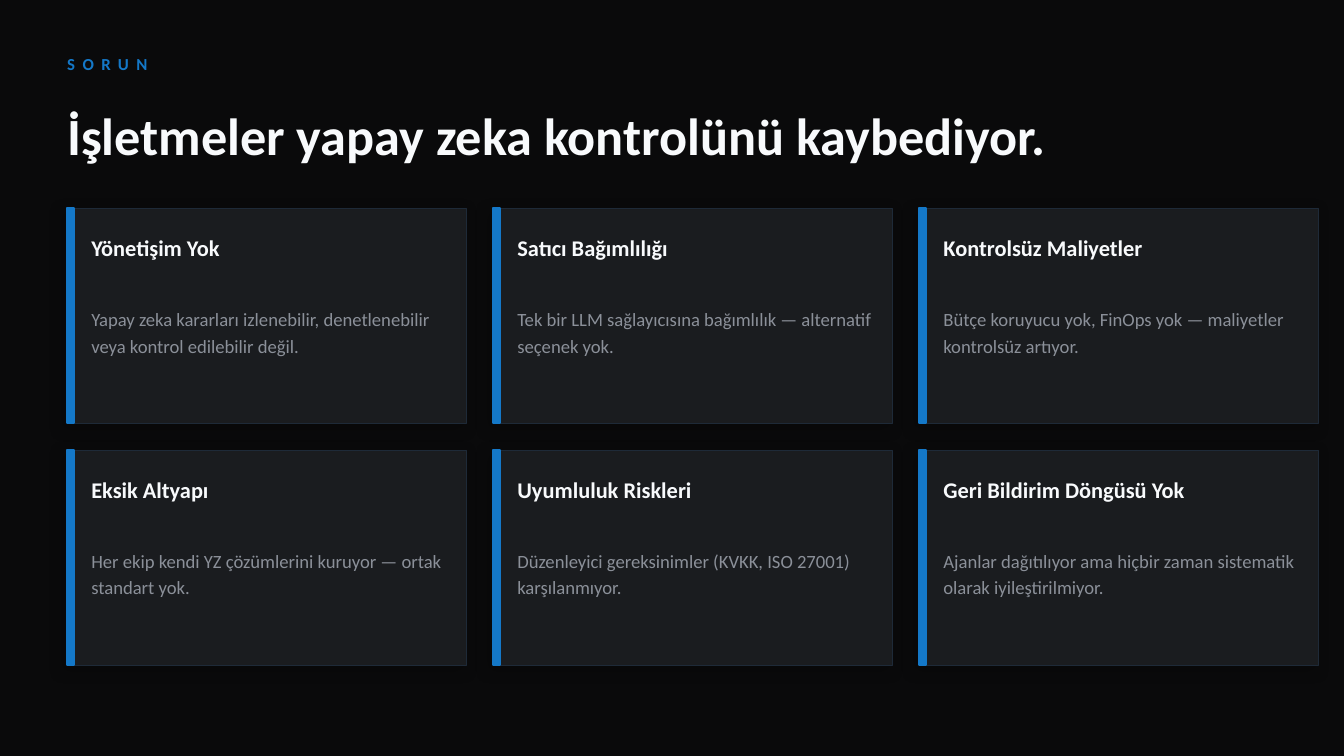
from lxml import etree
from pptx import Presentation
from pptx.dml.color import RGBColor
from pptx.enum import shapes, text
from pptx.oxml import ns
from pptx.util import Inches, Pt

BACKGROUND = RGBColor(0x0A, 0x0A, 0x0B)
CARD = RGBColor(0x1A, 0x1C, 0x1F)
BORDER = RGBColor(0x1E, 0x2A, 0x38)
ACCENT = RGBColor(0x14, 0x78, 0xC8)
WHITE = RGBColor(0xF8, 0xFA, 0xFC)
GREY = RGBColor(0x8B, 0x90, 0x99)
FONT = "Calibri"

KICKER = "SORUN"
TITLE = "İşletmeler yapay zeka kontrolünü kaybediyor."
PROBLEMS = [
    ("Yönetişim Yok",
     "Yapay zeka kararları izlenebilir, denetlenebilir veya kontrol edilebilir değil."),
    ("Satıcı Bağımlılığı",
     "Tek bir LLM sağlayıcısına bağımlılık — alternatif seçenek yok."),
    ("Kontrolsüz Maliyetler",
     "Bütçe koruyucu yok, FinOps yok — maliyetler kontrolsüz artıyor."),
    ("Eksik Altyapı",
     "Her ekip kendi YZ çözümlerini kuruyor — ortak standart yok."),
    ("Uyumluluk Riskleri",
     "Düzenleyici gereksinimler (KVKK, ISO 27001) karşılanmıyor."),
    ("Geri Bildirim Döngüsü Yok",
     "Ajanlar dağıtılıyor ama hiçbir zaman sistematik olarak iyileştirilmiyor."),
]

SLIDE_W = 10
SLIDE_H = SLIDE_W * 9 / 16
COLUMNS = 3
LEFT, TOP = 0.5, 1.55
CARD_W, CARD_H, GAP = 2.97, 1.6, 0.2
BAR_W, INDENT, TEXT_W = 0.05, 0.18, 2.7


def fill_text(sp, content, size, color, bold=False, line_spacing=None):
    tf = sp.text_frame
    tf.word_wrap = True
    tf.auto_size = text.MSO_AUTO_SIZE.NONE
    tf.vertical_anchor = text.MSO_ANCHOR.MIDDLE
    tf.margin_left = tf.margin_right = tf.margin_top = tf.margin_bottom = 0
    p = tf.paragraphs[0]
    p.alignment = text.PP_ALIGN.LEFT
    if line_spacing:
        p.line_spacing = line_spacing
    r = p.add_run()
    r.text = content
    r.font.name = FONT
    r.font.size = Pt(size)
    r.font.bold = bold
    r.font.color.rgb = color
    return r


def add_text(s, box, *args, **kwargs):
    sp = s.shapes.add_textbox(*map(Inches, box))
    return fill_text(sp, *args, **kwargs)


def add_rect(s, box, fill, line, width):
    sp = s.shapes.add_shape(shapes.MSO_SHAPE.RECTANGLE, *map(Inches, box))
    sp.shadow.inherit = False
    sp.fill.solid()
    sp.fill.fore_color.rgb = fill
    sp.line.color.rgb = line
    sp.line.width = Pt(width)
    return sp


def add_shadow(sp, blur, distance, angle, opacity):
    effects = sp.element.spPr.find(ns.qn("a:effectLst"))
    shadow = etree.SubElement(
        effects, ns.qn("a:outerShdw"), blurRad=str(Pt(blur)), dist=str(Pt(distance)),
        dir=str(angle * 60000), algn="bl", rotWithShape="0")
    color = etree.SubElement(shadow, ns.qn("a:srgbClr"), val="000000")
    etree.SubElement(color, ns.qn("a:alpha"), val=str(opacity * 1000))


def add_card(s, x, y, heading, body):
    card = add_rect(s, (x, y, CARD_W, CARD_H), CARD, BORDER, 0.5)
    add_shadow(card, blur=8, distance=3, angle=135, opacity=25)
    add_rect(s, (x, y, BAR_W, CARD_H), ACCENT, ACCENT, 1)
    add_text(s, (x + INDENT, y + 0.12, TEXT_W, 0.35), heading, 12, WHITE, bold=True)
    add_text(s, (x + INDENT, y + 0.48, TEXT_W, 0.85), body, 10, GREY, line_spacing=1.2)


def main():
    prs = Presentation()
    prs.slide_width, prs.slide_height = Inches(SLIDE_W), Inches(SLIDE_H)
    s = prs.slides.add_slide(prs.slide_layouts[5])
    s.background.fill.solid()
    s.background.fill.fore_color.rgb = BACKGROUND

    kicker = add_text(s, (LEFT, 0.35, 5, 0.25), KICKER, 9, ACCENT, bold=True)
    kicker.font._element.set("spc", "400")

    title = s.shapes.title
    title.left, title.top, title.width, title.height = map(Inches, (LEFT, 0.65, 9, 0.7))
    fill_text(title, TITLE, 28, WHITE, bold=True)

    for i, (heading, body) in enumerate(PROBLEMS):
        row, column = divmod(i, COLUMNS)
        add_card(s, LEFT + column * (CARD_W + GAP), TOP + row * (CARD_H + GAP), heading, body)

    prs.save("out.pptx")


if __name__ == "__main__":
    main()
